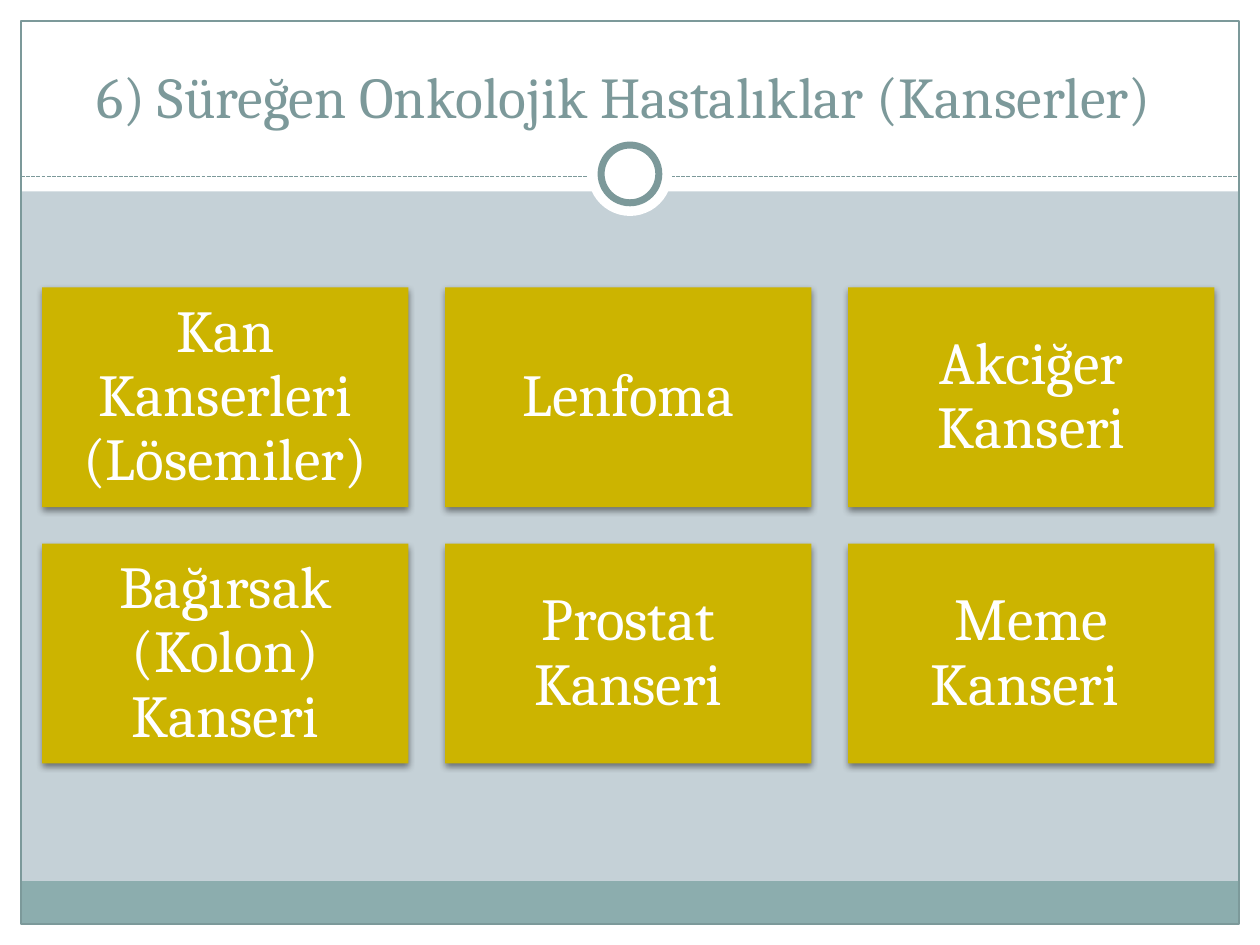
"""Build the slide on chronic cancers: a title over a grid of six cards."""
from lxml.etree import SubElement
from pptx import Presentation
from pptx.dml.color import RGBColor
from pptx.enum.dml import MSO_LINE
from pptx.enum.shapes import MSO_CONNECTOR, MSO_SHAPE
from pptx.enum.text import MSO_ANCHOR, PP_ALIGN
from pptx.oxml.ns import qn
from pptx.util import Pt

TITLE = "6) Süreğen Onkolojik Hastalıklar (Kanserler) "
CARDS = [
    ["Kan Kanserleri (Lösemiler)", "Lenfoma", "Akciğer Kanseri"],
    ["Bağırsak (Kolon) Kanseri", "Prostat Kanseri", "Meme Kanseri "],
]
COLORS = {"back": "C5D1D7", "white": "FFFFFF", "band": "8CADAE",
          "edge": "7C999A", "card": "CCB400"}
FONT = "Cambria"
WIDE, HIGH = 720, 540
EDGE = 12
RULE = 100.8
RING = (360, 99.4)
LEFT, TOP = 24, 164.2
CARD = (209.4, 125.6)
GAP = 20.9
BANDS = [
    ((0, HIGH - EDGE, WIDE, EDGE), "white"),
    ((0, 0, WIDE, 109.4), "white"),
    ((0, 0, EDGE, HIGH), "white"),
    ((WIDE - EDGE, 0, EDGE, HIGH), "white"),
    ((EDGE, 503.5, WIDE - 2 * EDGE, 24.5), "band"),
]


def color(name):
    return RGBColor.from_string(COLORS[name])


def stroke(line, weight):
    line.color.rgb = color("edge")
    line.width = Pt(weight)


def add_form(slide, box, fill=None, weight=0, kind=MSO_SHAPE.RECTANGLE):
    shape = slide.shapes.add_shape(kind, *map(Pt, box))
    shape.shadow.inherit = False
    if fill:
        shape.fill.solid()
        shape.fill.fore_color.rgb = color(fill)
    else:
        shape.fill.background()
    if weight:
        stroke(shape.line, weight)
    else:
        shape.line.fill.background()
    return shape


def add_ring(slide, size, weight=0):
    x, y = RING
    box = (x - size / 2, y - size / 2, size, size)
    add_form(slide, box, "white", weight, MSO_SHAPE.OVAL)


def add_rule(slide):
    ends = map(Pt, (EDGE, RULE, WIDE - EDGE, RULE))
    rule = slide.shapes.add_connector(MSO_CONNECTOR.STRAIGHT, *ends)
    stroke(rule.line, 0.75)
    rule.line.dash_style = MSO_LINE.SQUARE_DOT
    SubElement(rule._element.spPr, qn("a:effectLst"))


def write(shape, text, size, ink, anchor):
    frame = shape.text_frame
    frame.text = text
    frame.word_wrap = True
    frame.vertical_anchor = anchor
    para = frame.paragraphs[0]
    para.alignment = PP_ALIGN.CENTER
    font = para.runs[0].font
    font.name, font.size = FONT, Pt(size)
    font.color.rgb = color(ink)
    return frame


def add_shade(shape):
    effects = shape._element.spPr.find(qn("a:effectLst"))
    shade = SubElement(effects, qn("a:outerShdw"), blurRad=str(Pt(4)),
                       dist=str(Pt(2)), dir="5400000", rotWithShape="0")
    black = SubElement(shade, qn("a:srgbClr"), val="000000")
    SubElement(black, qn("a:alpha"), val="45000")


def add_card(slide, row, col, text):
    width, height = CARD
    box = (LEFT + col * (width + GAP), TOP + row * (height + GAP), width, height)
    card = add_form(slide, box, "card")
    add_shade(card)
    frame = write(card, text, 34, "white", MSO_ANCHOR.MIDDLE)
    frame.margin_left = frame.margin_right = Pt(10)
    frame.margin_top = frame.margin_bottom = Pt(10)
    frame.paragraphs[0].line_spacing = 0.9


def main():
    deck = Presentation()
    deck.slide_width, deck.slide_height = Pt(WIDE), Pt(HIGH)
    slide = deck.slides.add_slide(deck.slide_layouts[6])
    slide.background.fill.solid()
    slide.background.fill.fore_color.rgb = color("back")
    for box, fill in BANDS:
        add_form(slide, box, fill)
    add_form(slide, (EDGE, EDGE, WIDE - 2 * EDGE, HIGH - 2 * EDGE), weight=0.75)
    add_rule(slide)
    add_ring(slide, 48)
    add_ring(slide, 33, 4)
    title = slide.shapes.add_textbox(Pt(24), Pt(18), Pt(672), Pt(60))
    write(title, TITLE, 33, "edge", MSO_ANCHOR.BOTTOM)
    for row, names in enumerate(CARDS):
        for col, name in enumerate(names):
            add_card(slide, row, col, name)
    deck.save("out.pptx")


if __name__ == "__main__":
    main()
